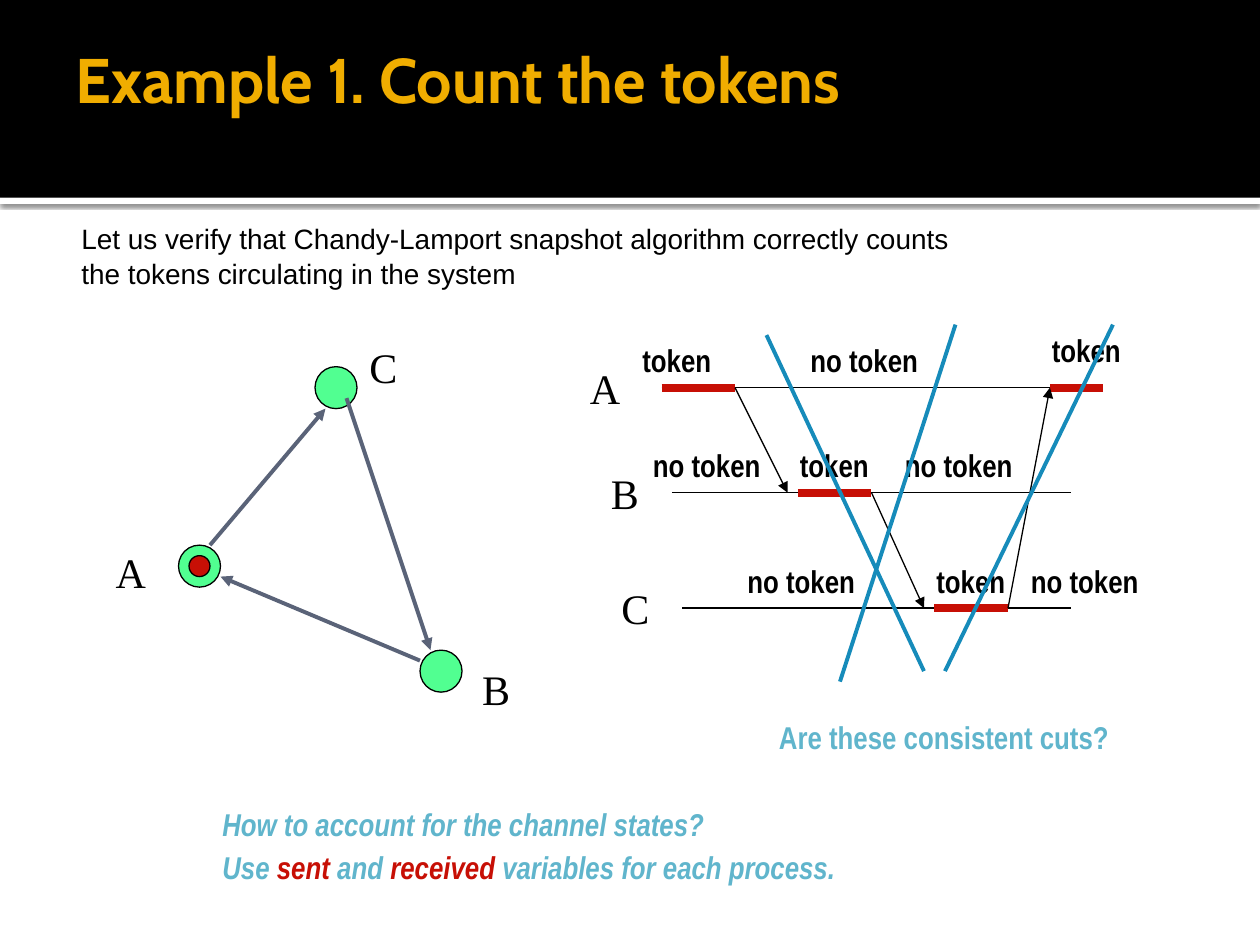
from lxml import etree
from pptx import Presentation
from pptx.dml.color import RGBColor
from pptx.enum import shapes, text
from pptx.oxml import parse_xml
from pptx.oxml.ns import nsdecls, qn
from pptx.util import Pt

BLACK, WHITE, GOLD = "000000", "FFFFFF", "F0AD00"
RED, GREEN, SLATE, BLUE, TEAL = "C70F05", "51FF91", "5A6378", "168BBA", "60B5CC"


def colour(hex_string):
    return RGBColor.from_string(hex_string)


def write(paragraphs, x, y, w, h, box=None, font="Arial Narrow", size=18,
          color=BLACK, bold=True, italic=False, wrap=False, anchor="TOP",
          insets=(7.2, 3.6, 7.2, 3.6), spacing=None, before=0):
    """Each paragraph is a list of (text, colour or None) runs."""
    box = box or slide.shapes.add_textbox(0, 0, 0, 0)
    box.left, box.top, box.width, box.height = Pt(x), Pt(y), Pt(w), Pt(h)
    frame = box.text_frame
    frame.word_wrap = wrap
    frame.auto_size = text.MSO_AUTO_SIZE.NONE
    frame.vertical_anchor = text.MSO_ANCHOR[anchor]
    (frame.margin_left, frame.margin_top,
     frame.margin_right, frame.margin_bottom) = map(Pt, insets)
    for i, runs in enumerate(paragraphs):
        paragraph = frame.add_paragraph() if i else frame.paragraphs[0]
        paragraph.alignment = text.PP_ALIGN.LEFT
        paragraph.space_before = Pt(before)
        if spacing:
            paragraph.line_spacing = spacing
        for words, own_color in runs:
            run = paragraph.add_run()
            run.text = words
            run.font.name, run.font.size = font, Pt(size)
            run.font.bold, run.font.italic = bold, italic
            run.font.color.rgb = colour(own_color or color)


def line(start, end, color=BLACK, width=0.75, arrow=False):
    connector = slide.shapes.add_connector(
        shapes.MSO_CONNECTOR.STRAIGHT, *map(Pt, start + end))
    connector.line.color.rgb = colour(color)
    connector.line.width = Pt(width)
    if arrow:
        outline = connector.line._get_or_add_ln()
        etree.SubElement(outline, qn("a:tailEnd"), type="triangle")
    etree.SubElement(connector._element.spPr, qn("a:effectLst"))


deck = Presentation()
deck.slide_width, deck.slide_height = Pt(720), Pt(540)
slide = deck.slides.add_slide(deck.slide_layouts[5])

# Header bands: a white strip with a shadow under the black band
for top, height, fill in [(113, 3.6, WHITE), (0, 113, BLACK)]:
    band = slide.shapes.add_shape(shapes.MSO_SHAPE.RECTANGLE,
                                  0, Pt(top), Pt(720), Pt(height))
    band.shadow.inherit = False
    band.fill.solid()
    band.fill.fore_color.rgb = colour(fill)
    band.line.fill.background()
    if fill == WHITE:
        band._element.spPr.find(qn("a:effectLst")).append(parse_xml(
            f'<a:outerShdw {nsdecls("a")} blurRad="31750" dist="10160" dir="5400000">'
            '<a:srgbClr val="000000"><a:alpha val="60000"/></a:srgbClr></a:outerShdw>'))

# Title, moved in front of the bands
title = slide.shapes.title
slide.shapes._spTree.append(title._element)
write([[("Example 1. Count the tokens", None)]], 36, 0, 612, 90, box=title,
      font="Cabin", size=36, color=GOLD, wrap=True, anchor="MIDDLE",
      insets=(7.2, 3.6, 3.6, 3.6))

# Introduction
write([[("Let us verify that Chandy-Lamport snapshot algorithm correctly counts", None)],
       [("the tokens circulating in the system", None)]],
      30, 119.5, 618, 72, font="Arial", size=16, bold=False, wrap=True,
      insets=(16.5, 7.2, 7.2, 3.6), before=1)

# Ring of processes; the last circle is the token held by A
for x, y, size, fill in [(180, 209.5, 24, GREEN), (102, 311.5, 24, GREEN),
                         (240, 371.5, 24, GREEN), (108, 317.5, 12, RED)]:
    circle = slide.shapes.add_shape(shapes.MSO_SHAPE.OVAL,
                                    Pt(x), Pt(y), Pt(size), Pt(size))
    circle.shadow.inherit = False
    circle.fill.solid()
    circle.fill.fore_color.rgb = colour(fill)
    circle.line.color.rgb = colour(BLACK)
    circle.line.width = Pt(0.75)

for start, end in [((198, 227.5), (246, 371.5)),
                   ((120, 311.5), (186, 233.5)),
                   ((240, 377.5), (126, 329.5))]:
    line(start, end, SLATE, 2.25, arrow=True)

# Timelines: process, height, start, letter x, token spans, token and no-token labels
row_a, row_b, row_c = 221.5, 281.5, 347.5
timelines = [
    ("A", row_a, 378, 330, [(378, 420), (600, 630)], [(360, 0), (594, -6)], [456]),
    ("B", row_b, 384, 342, [(456, 498)], [(450, 0)], [366, 510]),
    ("C", row_c, 390, 348, [(534, 576)], [(528, 0)], [420, 582]),
]
process_letters = [("A", 59, 309), ("B", 268.5, 375.5), ("C", 204, 191.5)]
for process, row, begin, letter_x, spans, holding, waiting in timelines:
    line((begin, row), (612, row))
    for left, right in spans:
        line((left, row), (right, row), RED, 4.5)
    for x, shift in holding:
        write([[("token", None)]], x, row - 30 + shift, 54, 29)
    for x in waiting:
        write([[("no token", None)]], x, row - 30, 76, 29)
    process_letters.append((process, letter_x, row - 18))

for letter, x, y in process_letters:
    write([[(letter, None)]], x, y, 31.5 if letter == "A" else 30, 36,
          font="Times New Roman", size=24, bold=False)

# Messages that carry the token
for start, end in [((420, row_a), (450, row_b)),
                   ((498, row_b), (528, row_c)),
                   ((576, row_c), (600, row_a))]:
    line(start, end, arrow=True)

# Cuts
for start, end in [((438, 191.5), (528, 383.5)),
                   ((546, 185.5), (480, 389.5)),
                   ((636, 185.5), (540, 383.5))]:
    line(start, end, BLUE, 2.25)

# Questions
write([[("Are these consistent cuts?", None)]], 438, 407, 203, 29, color=TEAL)
write([[("How to account for the channel states?", None)],
       [("Use ", None), ("sent", RED), (" and ", None), ("received", RED),
        (" variables for each process.", None)]],
      120, 453, 365, 57, color=TEAL, italic=True, spacing=1.15)

deck.save("out.pptx")
